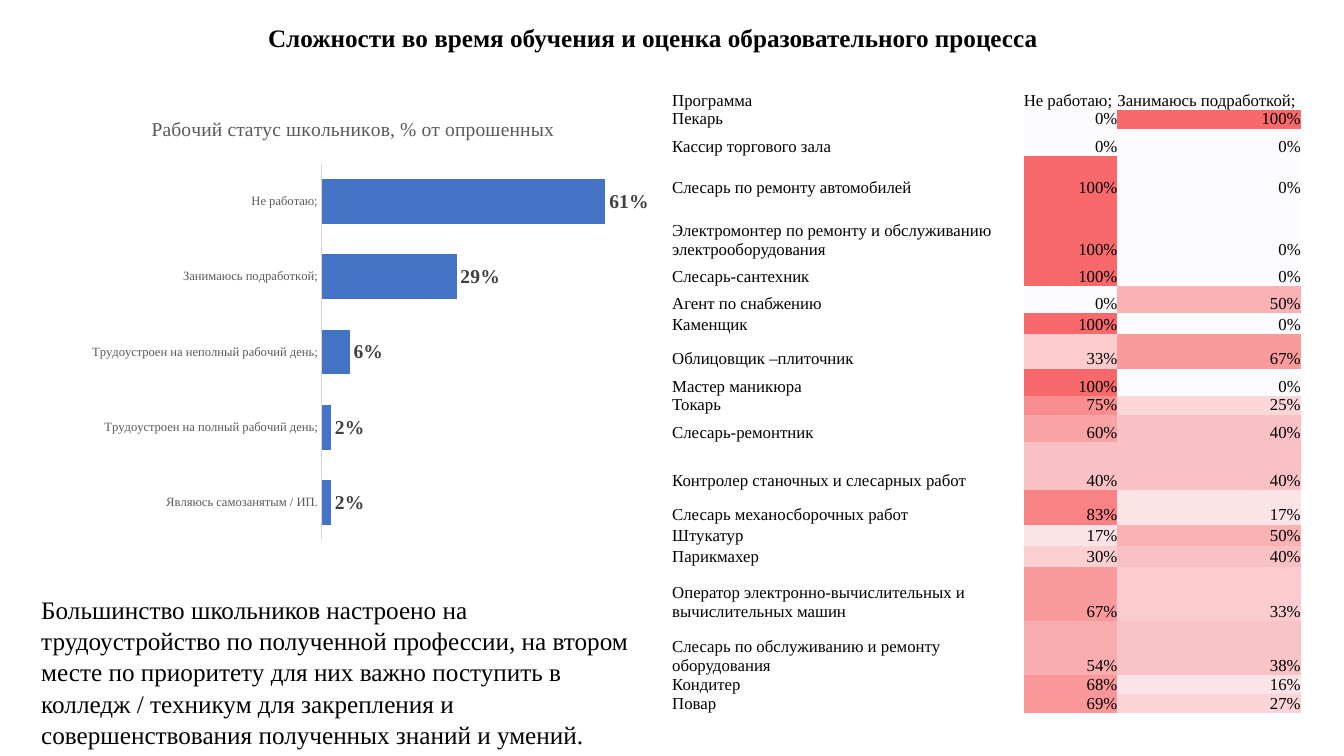
import pptx
import pptx.chart.data
import pptx.dml.color
import pptx.enum.chart
import pptx.enum.text
import pptx.oxml
import pptx.oxml.ns
import pptx.util

Cm, Pt = pptx.util.Cm, pptx.util.Pt
PP_ALIGN = pptx.enum.text.PP_ALIGN
ANCHOR = pptx.enum.text.MSO_ANCHOR

FONT = "Times New Roman"
COLORS = {
    "text": "000000", "muted": "595959", "label": "404040", "bar": "4472C4",
    "axis": "D9D9D9", "white": "FFFFFF", "low": "FCFCFF", "high": "F8696B",
}
NO_STYLE = "{2D5ABB26-0587-4C30-8999-92F81FD0307C}"

TITLE = "Сложности во время обучения и оценка образовательного процесса"
CONCLUSION = (
    "Большинство школьников настроено на трудоустройство по полученной профессии, "
    "на втором месте по приоритету для них важно поступить в колледж / техникум "
    "для закрепления и совершенствования полученных знаний и умений."
)
CHART_TITLE = "Рабочий статус школьников, % от опрошенных"
WORK_STATUS = {
    "Являюсь самозанятым / ИП.": 0.02,
    "Трудоустроен на полный рабочий день;": 0.02,
    "Трудоустроен на неполный рабочий день;": 0.06,
    "Занимаюсь подработкой;": 0.29,
    "Не работаю;": 0.61,
}
HEADER = ("Программа", "Не работаю;", "Занимаюсь подработкой;")
HEADER_HEIGHT = 0.79
COLUMN_WIDTHS = (8.86, 2.36, 4.62)
# programme, % not working, % with a side job, row height in cm
PROGRAMMES = [
    ("Пекарь", 0, 100, 0.36),
    ("Кассир торгового зала", 0, 0, 0.69),
    ("Слесарь по ремонту автомобилей", 100, 0, 1.04),
    ("Электромонтер по ремонту и обслуживанию электрооборудования", 100, 0, 1.55),
    ("Слесарь-сантехник", 100, 0, 0.69),
    ("Агент по снабжению", 0, 50, 0.69),
    ("Каменщик", 100, 0, 0.53),
    ("Облицовщик –плиточник", 33, 67, 0.86),
    ("Мастер маникюра", 100, 0, 0.69),
    ("Токарь", 75, 25, 0.36),
    ("Слесарь-ремонтник", 60, 40, 0.69),
    ("Контролер станочных и слесарных работ", 40, 40, 1.22),
    ("Слесарь механосборочных работ", 83, 17, 0.86),
    ("Штукатур", 17, 50, 0.53),
    ("Парикмахер", 30, 40, 0.53),
    ("Оператор электронно-вычислительных и вычислительных машин", 67, 33, 1.37),
    ("Слесарь по обслуживанию и ремонту оборудования", 54, 38, 1.37),
    ("Кондитер", 68, 16, 0.36),
    ("Повар", 69, 27, 0.36),
]


def rgb(value):
    return pptx.dml.color.RGBColor.from_string(value)


def heat(percent):
    """Blend the low and high colours of the heat map."""
    pairs = ((int(COLORS["low"][i:i + 2], 16), int(COLORS["high"][i:i + 2], 16))
             for i in (0, 2, 4))
    return "".join(f"{round(a + (b - a) * percent / 100):02X}" for a, b in pairs)


def set_layout(parent, index, **fractions):
    """Give a chart part a manual layout, in fractions of the chart."""
    for old in parent.xpath("c:layout"):
        parent.remove(old)
    target = '<c:layoutTarget val="inner"/>' if "w" in fractions else ""
    modes = "".join(f'<c:{k}Mode val="edge"/>' for k in "xy")
    sizes = "".join(f'<c:{k} val="{v}"/>' for k, v in fractions.items())
    parent.insert(index, pptx.oxml.parse_xml(
        f'<c:layout {pptx.oxml.ns.nsdecls("c")}><c:manualLayout>'
        f"{target}{modes}{sizes}</c:manualLayout></c:layout>"))


class SlideBuilder:
    def __init__(self, prs):
        self.slide = prs.slides.add_slide(prs.slide_layouts[5])

    def style(self, font, size, color="text", bold=False):
        font.name, font.size, font.bold = FONT, Pt(size), bold
        font.color.rgb = rgb(COLORS[color])

    def title(self, text, x, y, w, h):
        sp = self.slide.shapes.title
        sp.left, sp.top, sp.width, sp.height = Cm(x), Cm(y), Cm(w), Cm(h)
        tf = sp.text_frame
        tf.text = text
        tf.vertical_anchor = ANCHOR.MIDDLE
        p = tf.paragraphs[0]
        p.alignment, p.line_spacing, p.space_after = PP_ALIGN.LEFT, 0.9, Pt(6)
        self.style(p.runs[0].font, 18, bold=True)

    def text(self, text, x, y, w, h):
        tf = self.slide.shapes.add_textbox(Cm(x), Cm(y), Cm(w), Cm(h)).text_frame
        tf.word_wrap = True
        tf.auto_size = pptx.enum.text.MSO_AUTO_SIZE.SHAPE_TO_FIT_TEXT
        tf.text = text
        p = tf.paragraphs[0]
        p.line_spacing = 1.04
        self.style(p.runs[0].font, 18)

    def bar_chart(self, title, values, x, y, w, h):
        data = pptx.chart.data.CategoryChartData(number_format="0%")
        data.categories = list(values)
        data.add_series("Series 1", list(values.values()))
        chart = self.slide.shapes.add_chart(
            pptx.enum.chart.XL_CHART_TYPE.BAR_CLUSTERED,
            Cm(x), Cm(y), Cm(w), Cm(h), data).chart
        self.style(chart.font, 10)
        chart.has_legend = False

        tf = chart.chart_title.text_frame
        tf.text = title
        self.style(tf.paragraphs[0].runs[0].font, 14, "muted")
        set_layout(chart.chart_title.element, 1, x=0.155, y=0.04)
        set_layout(chart.element.xpath("c:chart/c:plotArea")[0], 0,
                   x=0.449, y=0.15, w=0.551, h=0.805)

        plot = chart.plots[0]
        plot.gap_width = 68
        plot.vary_by_categories = False
        fill = plot.series[0].format.fill
        fill.solid()
        fill.fore_color.rgb = rgb(COLORS["bar"])
        plot.has_data_labels = True
        labels = plot.data_labels
        labels.show_value = True
        labels.number_format, labels.number_format_is_linked = "0%", False
        labels.position = pptx.enum.chart.XL_LABEL_POSITION.OUTSIDE_END
        self.style(labels.font, 14, "label", bold=True)

        axis = chart.category_axis
        axis.major_tick_mark = pptx.enum.chart.XL_TICK_MARK.NONE
        axis.format.line.color.rgb = rgb(COLORS["axis"])
        axis.format.line.width = Pt(0.75)
        self.style(axis.tick_labels.font, 9, "muted")
        axis = chart.value_axis
        axis.minimum_scale, axis.maximum_scale = 0, 0.7
        axis.has_major_gridlines = False
        axis.visible = False

    def cell(self, cell, text, fill, align):
        cell.fill.solid()
        cell.fill.fore_color.rgb = rgb(fill)
        cell.margin_left = cell.margin_right = cell.margin_top = cell.margin_bottom = 0
        cell.vertical_anchor = ANCHOR.BOTTOM
        cell.text_frame.text = text
        p = cell.text_frame.paragraphs[0]
        p.alignment = align
        self.style(p.runs[0].font, 12)

    def heat_table(self, header, rows, x, y):
        heights = [HEADER_HEIGHT] + [row[-1] for row in rows]
        frame = self.slide.shapes.add_table(
            len(heights), len(header), Cm(x), Cm(y),
            Cm(sum(COLUMN_WIDTHS)), Cm(sum(heights)))
        table = frame.table
        table.first_row = table.horz_banding = False
        frame.element.xpath(".//a:tableStyleId")[0].text = NO_STYLE
        for column, width in zip(table.columns, COLUMN_WIDTHS):
            column.width = Cm(width)
        for row, height in zip(table.rows, heights):
            row.height = Cm(height)
        for j, text in enumerate(header):
            self.cell(table.cell(0, j), text, COLORS["white"], PP_ALIGN.LEFT)
        for i, (name, *shares, _) in enumerate(rows, 1):
            self.cell(table.cell(i, 0), name, COLORS["white"], PP_ALIGN.LEFT)
            for j, share in enumerate(shares, 1):
                self.cell(table.cell(i, j), f"{share}%", heat(share), PP_ALIGN.RIGHT)


def main():
    prs = pptx.Presentation()
    prs.slide_width, prs.slide_height = Cm(33.87), Cm(19.05)
    s = SlideBuilder(prs)
    s.title(TITLE, 6.5, 0.05, 21.29, 1.9)
    s.bar_chart(CHART_TITLE, WORK_STATUS, 1.42, 2.36, 14.94, 11.79)
    s.heat_table(HEADER, PROGRAMMES, 16.94, 1.98)
    s.text(CONCLUSION, 0.79, 14.81, 15.54, 4.11)
    prs.save("out.pptx")


if __name__ == "__main__":
    main()
